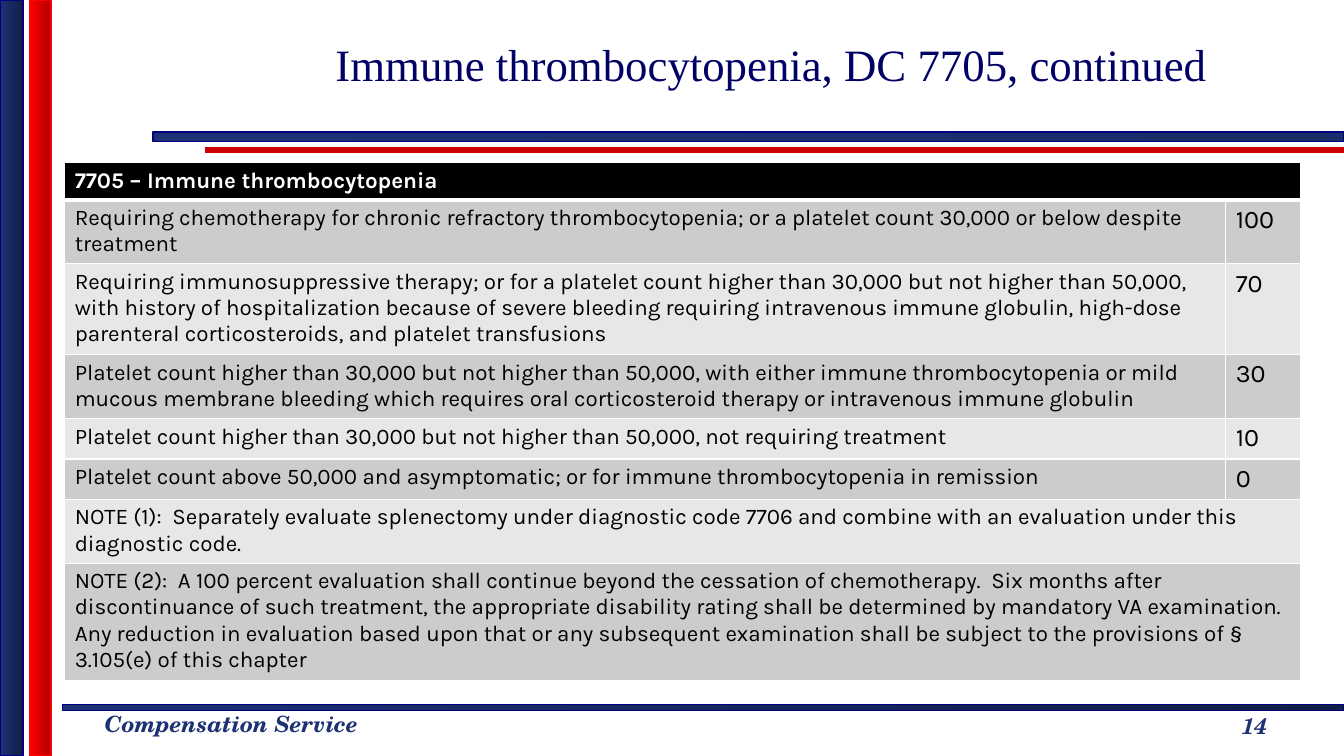
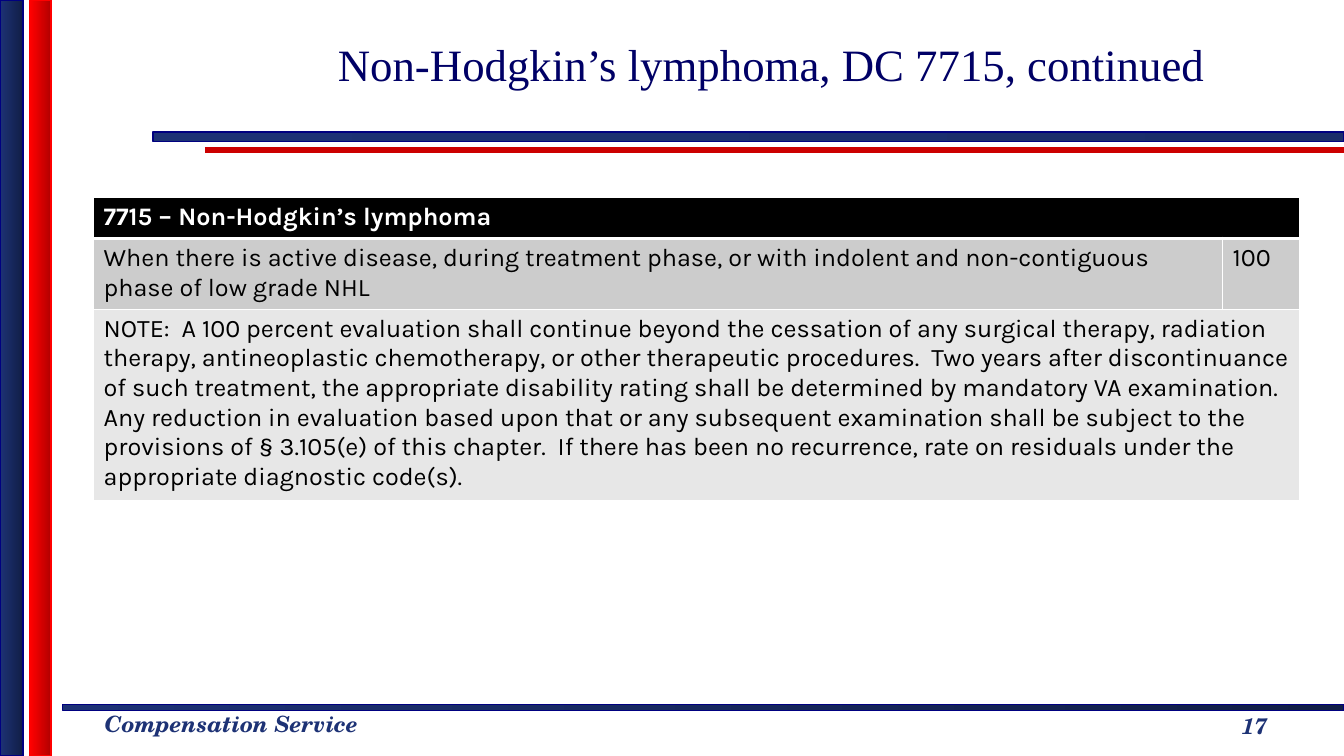
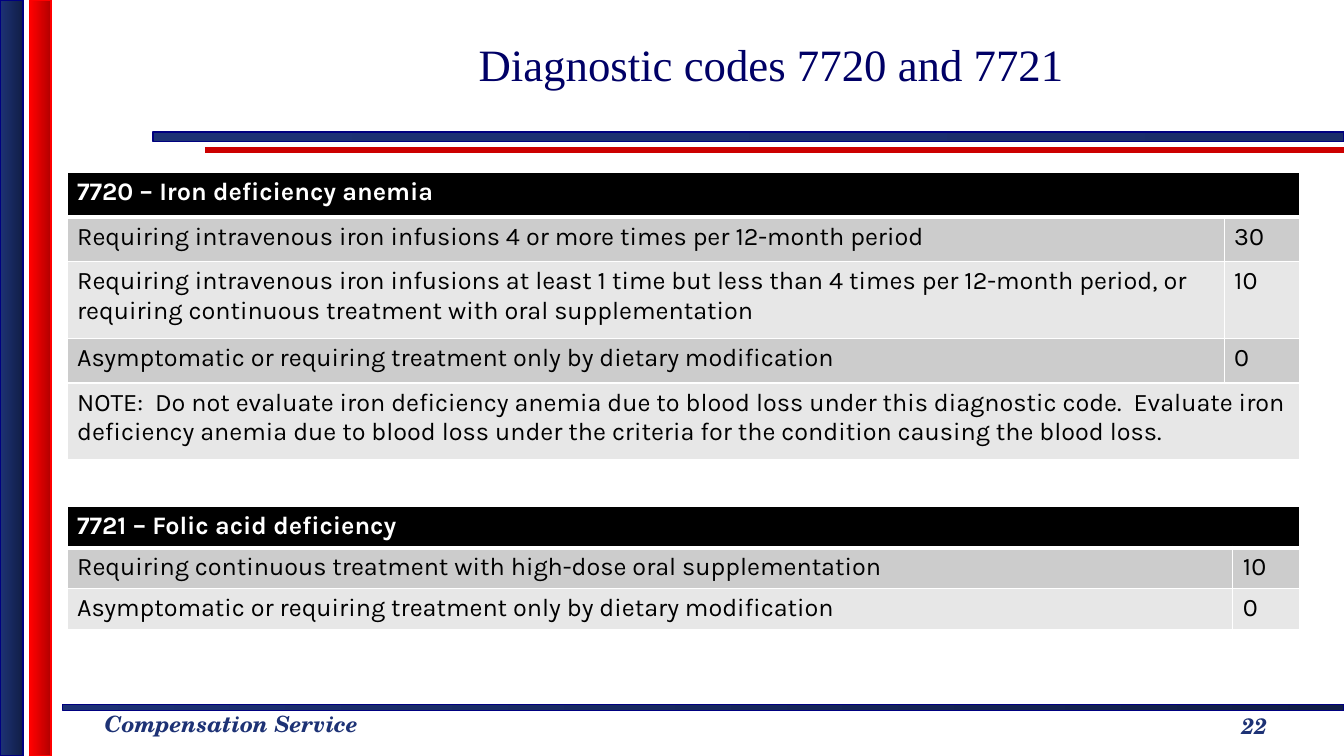
from lxml.etree import SubElement
from pptx import Presentation
from pptx.dml.color import RGBColor
from pptx.enum.shapes import MSO_CONNECTOR, MSO_SHAPE
from pptx.enum.text import MSO_ANCHOR, PP_ALIGN
from pptx.oxml.ns import qn
from pptx.util import Cm, Pt

WIDTH, HEIGHT = 33.87, 19.05
NAVY, TITLE_BLUE, RULE_RED = "1D3275", "000066", "CC0000"
WHITE, BLACK = "FFFFFF", "000000"
BANDS = ["CCCCCC", "E7E7E7"]
TITLE_FONT, TABLE_FONT, FOOTER_FONT = "Times New Roman", "Karla", "TeX Gyre Schola"

BARS = [
    (1.57, 17.75, WIDTH - 1.57, 0.15, NAVY, "111E46", "000080"),
    (3.86, 3.33, WIDTH - 3.86, 0.23, NAVY, "1A2D69", "000080"),
    (0, 0, 0.58, HEIGHT, NAVY, "111E46", "000080"),
    (0.76, 0, 0.53, HEIGHT, "FF0000", "B20000", "FF0000"),
]

PAGES = [
    ("Immune thrombocytopenia, DC 7705, continued", "14", [
        dict(left=1.63, top=4.1, columns=(29.26, 1.88), text_size=16, mark_size=18, rows=[
            (0.94, "7705 – Immune thrombocytopenia", None),
            (1.6, "Requiring chemotherapy for chronic refractory thrombocytopenia; or a platelet count 30,000 or below despite treatment", "100"),
            (2.29, "Requiring immunosuppressive therapy; or for a platelet count higher than 30,000 but not higher than 50,000, with history of hospitalization because of severe bleeding requiring intravenous immune globulin, high-dose parenteral corticosteroids, and platelet transfusions", "70"),
            (1.6, "Platelet count higher than 30,000 but not higher than 50,000, with either immune thrombocytopenia or mild mucous membrane bleeding which requires oral corticosteroid therapy or intravenous immune globulin", "30"),
            (0.94, "Platelet count higher than 30,000 but not higher than 50,000, not requiring treatment", "10"),
            (0.94, "Platelet count above 50,000 and asymptomatic; or for immune thrombocytopenia in remission", "0"),
            (1.6, "NOTE (1):  Separately evaluate splenectomy under diagnostic code 7706 and combine with an evaluation under this diagnostic code.", None),
            (2.97, "NOTE (2):  A 100 percent evaluation shall continue beyond the cessation of chemotherapy.  Six months after discontinuance of such treatment, the appropriate disability rating shall be determined by mandatory VA examination.  Any reduction in evaluation based upon that or any subsequent examination shall be subject to the provisions of § 3.105(e) of this chapter", None),
        ]),
    ]),
    ("Non-Hodgkin’s lymphoma, DC 7715, continued", "17", [
        dict(left=2.36, top=4.98, columns=(28.45, 1.95), text_size=18, mark_size=18, rows=[
            (1.03, "7715 – Non-Hodgkin’s lymphoma", None),
            (1.73, "When there is active disease, during treatment phase, or with indolent and non-contiguous phase of low grade NHL", "100"),
            (4.7, "NOTE:  A 100 percent evaluation shall continue beyond the cessation of any surgical therapy, radiation therapy, antineoplastic chemotherapy, or other therapeutic procedures.  Two years after discontinuance of such treatment, the appropriate disability rating shall be determined by mandatory VA examination.  Any reduction in evaluation based upon that or any subsequent examination shall be subject to the provisions of § 3.105(e) of this chapter.  If there has been no recurrence, rate on residuals under the appropriate diagnostic code(s).", None),
        ]),
    ]),
    ("Diagnostic codes 7720 and 7721", "22", [
        dict(left=1.69, top=4.35, columns=(29.16, 1.91), text_size=18, mark_size=18, rows=[
            (1.12, "7720 – Iron deficiency anemia", None),
            (1.12, "Requiring intravenous iron infusions 4 or more times per 12-month period", "30"),
            (1.94, "Requiring intravenous iron infusions at least 1 time but less than 4 times per 12-month period, or requiring continuous treatment with oral supplementation", "10"),
            (1.12, "Asymptomatic or requiring treatment only by dietary modification", "0"),
            (1.94, "NOTE:  Do not evaluate iron deficiency anemia due to blood loss under this diagnostic code.  Evaluate iron deficiency anemia due to blood loss under the criteria for the condition causing the blood loss.", None),
        ]),
        dict(left=1.69, top=12.77, columns=(29.38, 1.69), text_size=18, mark_size=18, rows=[
            (1.03, "7721 – Folic acid deficiency", None),
            (1.03, "Requiring continuous treatment with high-dose oral supplementation", "10"),
            (1.03, "Asymptomatic or requiring treatment only by dietary modification", "0"),
        ]),
    ]),
]


def color(code):
    return RGBColor.from_string(code)


def write(frame, text, font, size, code, bold=False, italic=False, align=PP_ALIGN.LEFT):
    frame.text = text
    frame.word_wrap = True
    para = frame.paragraphs[0]
    para.alignment = align
    for span in para.runs:
        span.font.name = font
        span.font.size = Pt(size)
        span.font.bold = bold
        span.font.italic = italic
        span.font.color.rgb = color(code)


deck = Presentation()
deck.slide_width, deck.slide_height = Cm(WIDTH), Cm(HEIGHT)

for title, number, tables in PAGES:
    page = deck.slides.add_slide(deck.slide_layouts[6])

    rule = page.shapes.add_connector(MSO_CONNECTOR.STRAIGHT, Cm(5.16), Cm(3.78), Cm(WIDTH), Cm(3.78))
    rule.line.color.rgb = color(RULE_RED)
    rule.line.width = Pt(4)
    SubElement(rule._element.spPr, qn("a:effectLst"))

    for left, top, width, height, start, end, outline in BARS:
        bar = page.shapes.add_shape(MSO_SHAPE.RECTANGLE, Cm(left), Cm(top), Cm(width), Cm(height))
        bar.shadow.inherit = False
        bar.fill.gradient()
        bar.fill.gradient_angle = 0
        for stop, code, position in zip(bar.fill.gradient_stops, (start, end), (0, 1)):
            stop.color.rgb = color(code)
            stop.position = position
        bar.line.color.rgb = color(outline)
        bar.line.width = Pt(1)

    footer = page.shapes.add_textbox(Cm(2.39), Cm(17.78), Cm(7.16), Cm(0.94))
    write(footer.text_frame, "Compensation Service", FOOTER_FONT, 16, NAVY, True, True)

    heading = page.shapes.add_textbox(Cm(5.94), Cm(0), Cm(27), Cm(3.2))
    heading.text_frame.vertical_anchor = MSO_ANCHOR.MIDDLE
    write(heading.text_frame, title, TITLE_FONT, 32, TITLE_BLUE, align=PP_ALIGN.CENTER)

    for layout in tables:
        rows, columns = layout["rows"], layout["columns"]
        table = page.shapes.add_table(
            len(rows), 2, Cm(layout["left"]), Cm(layout["top"]),
            Cm(sum(columns)), Cm(sum(row[0] for row in rows))).table
        table.horz_banding = False
        table.first_row = False
        for column, width in zip(table.columns, columns):
            column.width = Cm(width)

        for index, (height, text, mark) in enumerate(rows):
            is_header = index == 0
            table.rows[index].height = Cm(height)
            cells = [table.cell(index, 0), table.cell(index, 1)]
            for cell in cells:
                properties = cell._tc.get_or_add_tcPr()
                for side in ("L", "R", "T", "B"):
                    is_thick = (index, side) in ((0, "B"), (1, "T"))
                    border = SubElement(properties, qn("a:ln" + side), w=str(Pt(3 if is_thick else 1)))
                    paint = SubElement(border, qn("a:solidFill"))
                    SubElement(paint, qn("a:srgbClr"), val=WHITE)
                cell.fill.solid()
                cell.fill.fore_color.rgb = color(BLACK if is_header else BANDS[(index - 1) % 2])

            write(cells[0].text_frame, text, TABLE_FONT, layout["text_size"],
                  WHITE if is_header else BLACK, is_header)
            if mark is None:
                cells[0].merge(cells[1])
            else:
                write(cells[1].text_frame, mark, TABLE_FONT, layout["mark_size"], BLACK)

    number_box = page.shapes.add_textbox(Cm(29.36), Cm(17.65), Cm(4.51), Cm(1.27))
    number_box.text_frame.vertical_anchor = MSO_ANCHOR.MIDDLE
    write(number_box.text_frame, number, FOOTER_FONT, 16, NAVY, True, True, PP_ALIGN.CENTER)

deck.save("out.pptx")
